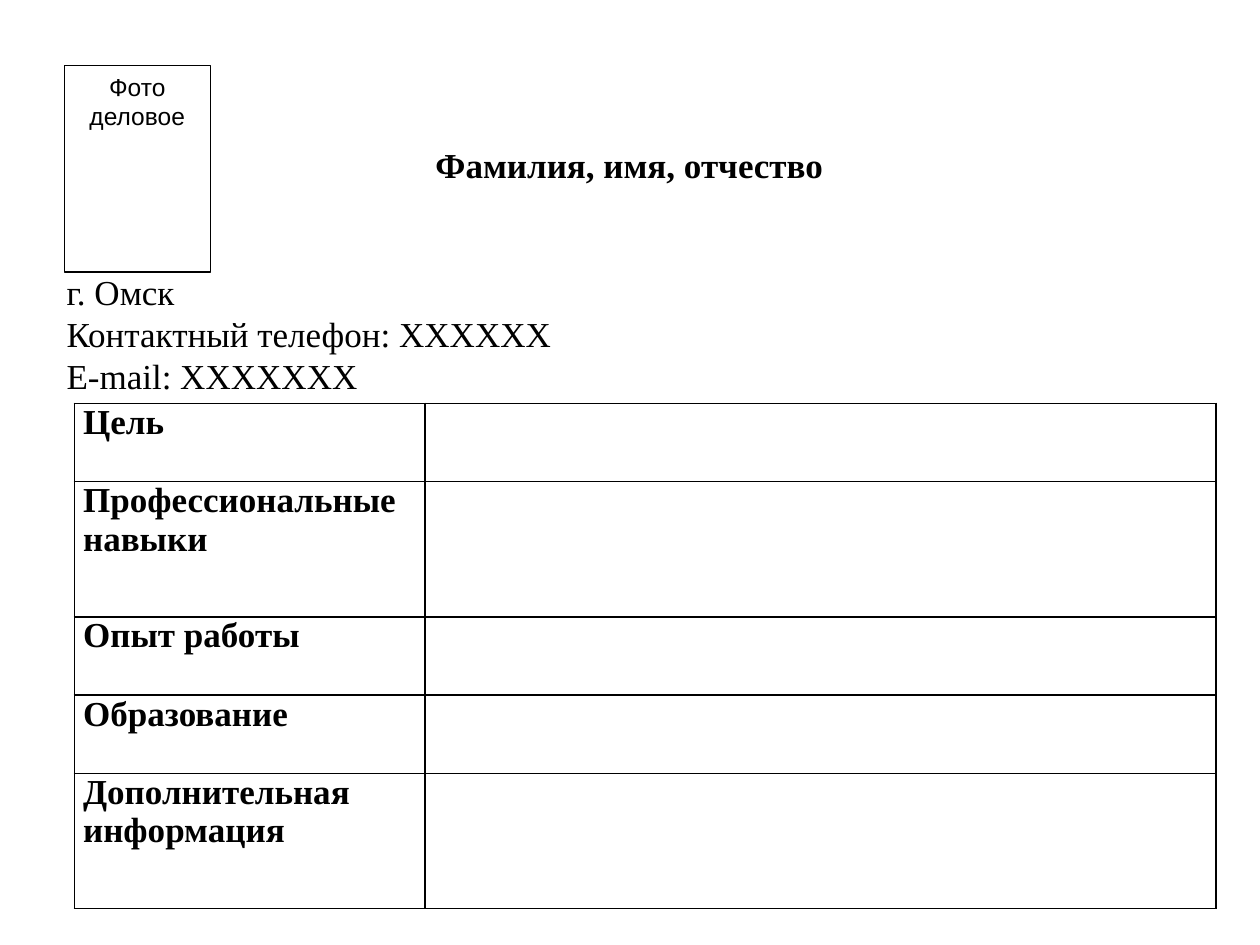
from dataclasses import dataclass

from lxml.etree import SubElement
from pptx import Presentation
from pptx.dml.color import RGBColor
from pptx.enum.shapes import MSO_SHAPE
from pptx.enum.text import MSO_ANCHOR, PP_ALIGN
from pptx.oxml.ns import qn
from pptx.util import Inches, Pt


@dataclass(frozen=True)
class Theme:
    ink: RGBColor = RGBColor(0, 0, 0)
    paper: RGBColor = RGBColor(255, 255, 255)
    serif: str = "Times New Roman"
    sans: str = "Arial"
    body: Pt = Pt(20)
    caption: Pt = Pt(14)
    contact_leading: Pt = Pt(24)
    label_leading: Pt = Pt(22)
    frame: Pt = Pt(0.75)
    grid: Pt = Pt(1)


@dataclass(frozen=True)
class Box:
    left: int
    top: int
    width: int
    height: int

    def place(self):
        return self.left, self.top, self.width, self.height


THEME = Theme()
SLIDE_WIDTH, SLIDE_HEIGHT = Inches(10), Inches(7.5)
CONTACTS = ["г. Омск", "Контактный телефон: ХХХХХХ", "E-mail: ХХХХХХХ"]
SECTIONS = [
    ("Цель", 0.62),
    ("Профессиональные навыки", 1.07),
    ("Опыт работы", 0.62),
    ("Образование", 0.62),
    ("Дополнительная информация", 1.07),
]
LABEL_SHARE = 0.307


def share(left, top, width, height):
    return Box(
        int(SLIDE_WIDTH * left / 100),
        int(SLIDE_HEIGHT * top / 100),
        int(SLIDE_WIDTH * width / 100),
        int(SLIDE_HEIGHT * height / 100),
    )


def style(paragraph, align, size=THEME.body, face=THEME.serif, bold=False, leading=None):
    paragraph.alignment = align
    paragraph.font.size = size
    paragraph.font.name = face
    paragraph.font.bold = bold
    paragraph.font.color.rgb = THEME.ink
    if leading:
        paragraph.line_spacing = leading


def add_name(slide, box):
    name = slide.shapes.title
    name.left, name.top, name.width, name.height = box.place()
    frame = name.text_frame
    frame.text = "Фамилия, имя, отчество"
    frame.vertical_anchor = MSO_ANCHOR.MIDDLE
    frame.margin_top = frame.margin_bottom = 0
    style(frame.paragraphs[0], PP_ALIGN.CENTER, bold=True)


def add_photo_frame(slide, box):
    photo = slide.shapes.add_shape(MSO_SHAPE.RECTANGLE, *box.place())
    photo.shadow.inherit = False
    photo.fill.solid()
    photo.fill.fore_color.rgb = THEME.paper
    photo.line.color.rgb = THEME.ink
    photo.line.width = THEME.frame
    frame = photo.text_frame
    frame.word_wrap = True
    frame.vertical_anchor = MSO_ANCHOR.TOP
    frame.text = "Фото деловое"
    style(frame.paragraphs[0], PP_ALIGN.CENTER, THEME.caption, THEME.sans)


def add_contacts(slide, box):
    frame = slide.shapes.add_textbox(*box.place()).text_frame
    frame.word_wrap = True
    frame.margin_top = frame.margin_bottom = 0
    frame.text = "\n".join(CONTACTS)
    for paragraph in frame.paragraphs:
        style(paragraph, PP_ALIGN.LEFT, leading=THEME.contact_leading)


def outline(cell):
    properties = cell._tc.get_or_add_tcPr()
    for side in ("a:lnL", "a:lnR", "a:lnT", "a:lnB"):
        border = SubElement(properties, qn(side), w=str(THEME.grid))
        ink = SubElement(border, qn("a:solidFill"))
        SubElement(ink, qn("a:srgbClr"), val=str(THEME.ink))


def add_sections(slide, box):
    table = slide.shapes.add_table(len(SECTIONS), 2, *box.place()).table
    table.first_row = table.horz_banding = False
    table.columns[0].width = int(box.width * LABEL_SHARE)
    table.columns[1].width = box.width - table.columns[0].width
    total = sum(weight for _, weight in SECTIONS)
    for row, (label, weight) in zip(table.rows, SECTIONS):
        row.height = int(box.height * weight / total)
        for cell in row.cells:
            outline(cell)
            cell.fill.background()
            cell.margin_left = cell.margin_right = Inches(0.07)
            cell.margin_top = cell.margin_bottom = 0
        heading = row.cells[0].text_frame
        heading.text = label
        style(heading.paragraphs[0], PP_ALIGN.JUSTIFY, bold=True, leading=THEME.label_leading)


def main():
    presentation = Presentation()
    presentation.slide_width, presentation.slide_height = SLIDE_WIDTH, SLIDE_HEIGHT
    slide = presentation.slides.add_slide(presentation.slide_layouts[5])
    add_sections(slide, share(5.9, 42.67, 90.6, 53.5))
    add_photo_frame(slide, share(5.1, 6.93, 11.6, 21.87))
    add_name(slide, share(4.3, 15.2, 91.3, 4.5))
    add_contacts(slide, share(4.3, 28.6, 91.3, 13.4))
    presentation.save("out.pptx")


if __name__ == "__main__":
    main()
